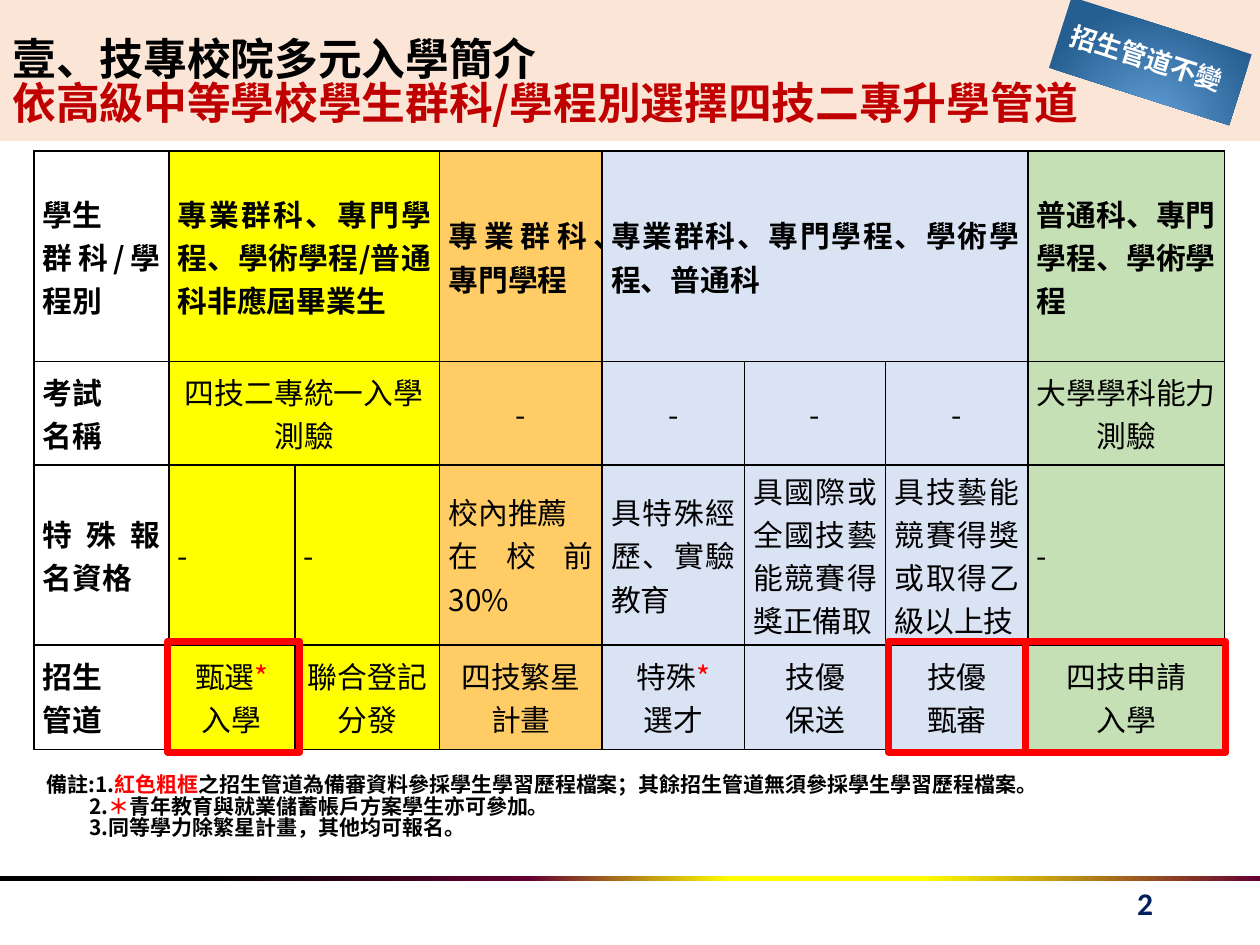
from dataclasses import dataclass

from lxml import etree
from pptx import Presentation
from pptx.dml.color import RGBColor
from pptx.enum.shapes import MSO_SHAPE
from pptx.enum.text import MSO_ANCHOR, PP_ALIGN
from pptx.oxml import parse_xml
from pptx.oxml.ns import nsdecls, qn
from pptx.util import Inches, Pt

RECTANGLE = MSO_SHAPE.RECTANGLE
LEFT, CENTER, RIGHT, JUSTIFY = PP_ALIGN.LEFT, PP_ALIGN.CENTER, PP_ALIGN.RIGHT, PP_ALIGN.JUSTIFY
TOP, MIDDLE, BOTTOM = MSO_ANCHOR.TOP, MSO_ANCHOR.MIDDLE, MSO_ANCHOR.BOTTOM

BLACK = RGBColor(0x00, 0x00, 0x00)
WHITE = RGBColor(0xFF, 0xFF, 0xFF)
RED = RGBColor(0xFF, 0x00, 0x00)
DARK_RED = RGBColor(0xC0, 0x00, 0x00)
NAVY = RGBColor(0x00, 0x20, 0x60)
WINE = RGBColor(0x66, 0x00, 0x32)
PEACH = RGBColor(0xFB, 0xE5, 0xD6)
YELLOW = RGBColor(0xFF, 0xFF, 0x00)
ORANGE = RGBColor(0xFF, 0xCC, 0x66)
PALE_BLUE = RGBColor(0xDA, 0xE3, 0xF3)
PALE_GREEN = RGBColor(0xC5, 0xE0, 0xB4)
SKY_BLUE = RGBColor(0x63, 0xA0, 0xD7)
DEEP_BLUE = RGBColor(0x25, 0x5E, 0x91)

CHINESE_FONT = "Noto Sans CJK SC"
NUMBER_FONT = "Calibri"
SLIDE_WIDTH, SLIDE_HEIGHT = Inches(10), Inches(7.5)
COLUMN, ROW = SLIDE_WIDTH / 100, SLIDE_HEIGHT / 75  # layout grid
TIGHT = 0.84  # line spacing of title and notes
BADGE_ANGLE = 17.7


@dataclass(frozen=True)
class Box:
    """A place on the grid of 100 columns and 75 rows."""
    left: float
    top: float
    width: float
    height: float

    def lengths(self) -> list[int]:
        return [round(self.left * COLUMN), round(self.top * ROW),
                round(self.width * COLUMN), round(self.height * ROW)]


@dataclass(frozen=True)
class Run:
    text: str
    color: RGBColor


@dataclass(frozen=True)
class Entry:
    """A table cell: its paragraphs, fill and number of columns."""
    lines: list
    fill: RGBColor | None = None
    align: PP_ALIGN = CENTER
    bold: bool = False
    span: int = 1


def write(frame, lines, *, size, color=BLACK, bold=True, font=CHINESE_FONT, align=LEFT,
          anchor=TOP, spacing=1.0) -> None:
    """Each line is a string, a Run or a list of these."""
    frame.word_wrap = True
    frame.vertical_anchor = anchor
    for index, line in enumerate(lines):
        paragraph = frame.paragraphs[0] if index == 0 else frame.add_paragraph()
        paragraph.alignment = align
        paragraph.line_spacing = spacing
        for part in line if isinstance(line, list) else [line]:
            piece = part if isinstance(part, Run) else Run(part, color)
            run = paragraph.add_run()
            run.text = piece.text
            run.font.size, run.font.bold, run.font.name = Pt(size), bold, font
            run.font.color.rgb = piece.color
            east_asian = etree.SubElement(run.font._element, qn("a:ea"))
            east_asian.set("typeface", font)


def add_rectangle(slide, box: Box, fill=None, line=None, line_width=4):
    shape = slide.shapes.add_shape(RECTANGLE, *box.lengths())
    shape.shadow.inherit = False
    if fill is None:
        shape.fill.background()
    else:
        shape.fill.solid()
        shape.fill.fore_color.rgb = fill
    if line is None:
        shape.line.fill.background()
    else:
        shape.line.color.rgb = line
        shape.line.width = Pt(line_width)
    return shape


def add_text_box(slide, box: Box, lines, **text_format):
    shape = slide.shapes.add_textbox(*box.lengths())
    write(shape.text_frame, lines, **text_format)
    return shape


def set_gradient(shape, stops, direction: str) -> None:
    stop_xml = "".join(f'<a:gs pos="{share * 1000}"><a:srgbClr val="{color}"/></a:gs>'
                       for share, color in stops)
    gradient = parse_xml(f'<a:gradFill {nsdecls("a")} rotWithShape="1">'
                         f"<a:gsLst>{stop_xml}</a:gsLst>{direction}</a:gradFill>")
    properties = shape._element.spPr
    properties.replace(properties.find(qn("a:noFill")), gradient)


def set_borders(cell) -> None:
    properties = cell._tc.get_or_add_tcPr()
    for index, side in enumerate(("lnL", "lnR", "lnT", "lnB")):
        properties.insert(index, parse_xml(
            f'<a:{side} {nsdecls("a")} w="12700"><a:solidFill><a:srgbClr val="{BLACK}"/>'
            f"</a:solidFill></a:{side}>"))


def add_admission_table(slide, box: Box, widths, heights, rows) -> None:
    table = slide.shapes.add_table(len(heights), len(widths), *box.lengths()).table
    table.first_row = table.horz_banding = False
    for column, width in zip(table.columns, widths):
        column.width = round(width * COLUMN)
    for row, height in zip(table.rows, heights):
        row.height = round(height * ROW)
    for row_index, entries in enumerate(rows):
        column_index = 0
        for entry in entries:
            last = column_index + entry.span - 1
            first_cell = table.cell(row_index, column_index)
            if entry.span > 1:
                first_cell.merge(table.cell(row_index, last))
            for index in range(column_index, last + 1):
                cell = table.cell(row_index, index)
                if entry.fill is None:
                    cell.fill.background()
                else:
                    cell.fill.solid()
                    cell.fill.fore_color.rgb = entry.fill
                set_borders(cell)
                cell.margin_left = cell.margin_right = Inches(0.07)
                cell.margin_top = cell.margin_bottom = 0
            write(first_cell.text_frame, entry.lines, size=17, bold=entry.bold, align=entry.align)
            first_cell.vertical_anchor = MIDDLE
            column_index = last + 1


def heading(*lines, fill=None, span=1) -> Entry:
    return Entry(list(lines), fill, JUSTIFY, True, span)


STAR = Run("*", RED)
TABLE_ROWS = [
    [heading("學生", "群科/學程別"),
     heading("專業群科、專門學程、學術學程/普通科非應屆畢業生", fill=YELLOW, span=2),
     heading("專業群科、", "專門學程", fill=ORANGE),
     heading("專業群科、專門學程、學術學程、普通科", fill=PALE_BLUE, span=3),
     heading("普通科、專門學程、學術學程", fill=PALE_GREEN)],
    [heading("考試", "名稱"), Entry(["四技二專統一入學測驗"], YELLOW, span=2),
     Entry(["-"], ORANGE), *[Entry(["-"], PALE_BLUE)] * 3,
     Entry(["大學學科能力測驗"], PALE_GREEN)],
    [heading("特殊報名資格"), *[Entry(["-"], YELLOW, LEFT)] * 2,
     Entry(["校內推薦", "在校前30%"], ORANGE, JUSTIFY),
     Entry(["具特殊經歷、實驗教育"], PALE_BLUE, JUSTIFY),
     Entry(["具國際或全國技藝能競賽得獎正備取"], PALE_BLUE, JUSTIFY),
     Entry(["具技藝能競賽得獎或取得乙級以上技"], PALE_BLUE, JUSTIFY),
     Entry(["-"], PALE_GREEN, LEFT)],
    [heading("招生", "管道"), Entry([["甄選", STAR], "入學"], YELLOW),
     Entry(["聯合登記分發"], YELLOW), Entry(["四技繁星計畫"], ORANGE),
     Entry([["特殊", STAR], "選才"], PALE_BLUE), Entry(["技優", "保送"], PALE_BLUE),
     Entry(["技優", "甄審"], PALE_BLUE), Entry(["四技申請", "入學"], PALE_GREEN)],
]


def main() -> None:
    presentation = Presentation()
    presentation.slide_width, presentation.slide_height = SLIDE_WIDTH, SLIDE_HEIGHT
    slide = presentation.slides.add_slide(presentation.slide_layouts[6])

    # Footer rule and page number
    rule = add_rectangle(slide, Box(0, 69.5, 100, 0.4))
    set_gradient(rule, [(16, BLACK), (42, WINE), (58, YELLOW), (73, YELLOW), (100, WINE)],
                 '<a:lin ang="0" scaled="1"/>')
    add_text_box(slide, Box(86.4, 69.7, 6.1, 4), ["2"], size=18, color=NAVY,
                 font=NUMBER_FONT, align=RIGHT)

    # Title band
    band = add_rectangle(slide, Box(0, 0, 100, 11.2), PEACH)
    band.text_frame.margin_top = band.text_frame.margin_bottom = Inches(0.1)
    write(band.text_frame,
          ["壹、技專校院多元入學簡介", Run("依高級中等學校學生群科/學程別選擇四技二專升學管道", DARK_RED)],
          size=25, anchor=BOTTOM, spacing=TIGHT)

    # Notes, the second and third set in under the first number
    notes = add_text_box(
        slide, Box(2.7, 61.1, 96.6, 7.1),
        [["備註:1.", Run("紅色粗框", RED),
          "之招生管道為備審資料參採學生學習歷程檔案；其餘招生管道無須參採學生學習歷程檔案。"],
         ["2.", Run("＊", RED), "青年教育與就業儲蓄帳戶方案學生亦可參加。"],
         "3.同等學力除繁星計畫，其他均可報名。"], size=12, spacing=TIGHT)
    for paragraph in notes.text_frame.paragraphs[1:]:
        paragraph._p.get_or_add_pPr().set("marL", str(Inches(0.34)))

    # Admission table and the red frames over its last row
    add_admission_table(slide, Box(2.7, 12, 94.6, 47.6),
                        [10.7, 10, 11.5, 12.9, 11.3, 11.2, 11.3, 15.6],
                        [16.7, 8.2, 14.3, 8.3], TABLE_ROWS)
    for left, width in ((13.3, 10.5), (70.5, 10.9), (81.4, 15.9)):
        add_rectangle(slide, Box(left, 50.9, width, 8.8), line=RED)

    # Tilted badge
    badge = add_rectangle(slide, Box(83.8, 1.9, 15, 5.9))
    badge.rotation = BADGE_ANGLE
    set_gradient(badge, [(0, SKY_BLUE), (100, DEEP_BLUE)],
                 '<a:path path="circle"><a:fillToRect l="50000" t="130000" r="50000" b="-30000"/>'
                 "</a:path>")
    label = add_text_box(slide, Box(83.8, 2.9, 14.8, 3.5), ["招生管道不變"], size=15,
                         color=WHITE, align=JUSTIFY, anchor=MIDDLE)
    label.rotation = BADGE_ANGLE
    label_font = label.text_frame.paragraphs[0].runs[0].font._element
    label_font.find(qn("a:latin")).addprevious(parse_xml(
        f'<a:effectLst {nsdecls("a")}><a:outerShdw blurRad="38100" dist="38100" dir="2700000">'
        f'<a:srgbClr val="{BLACK}"/></a:outerShdw></a:effectLst>'))

    presentation.save("out.pptx")


if __name__ == "__main__":
    main()
